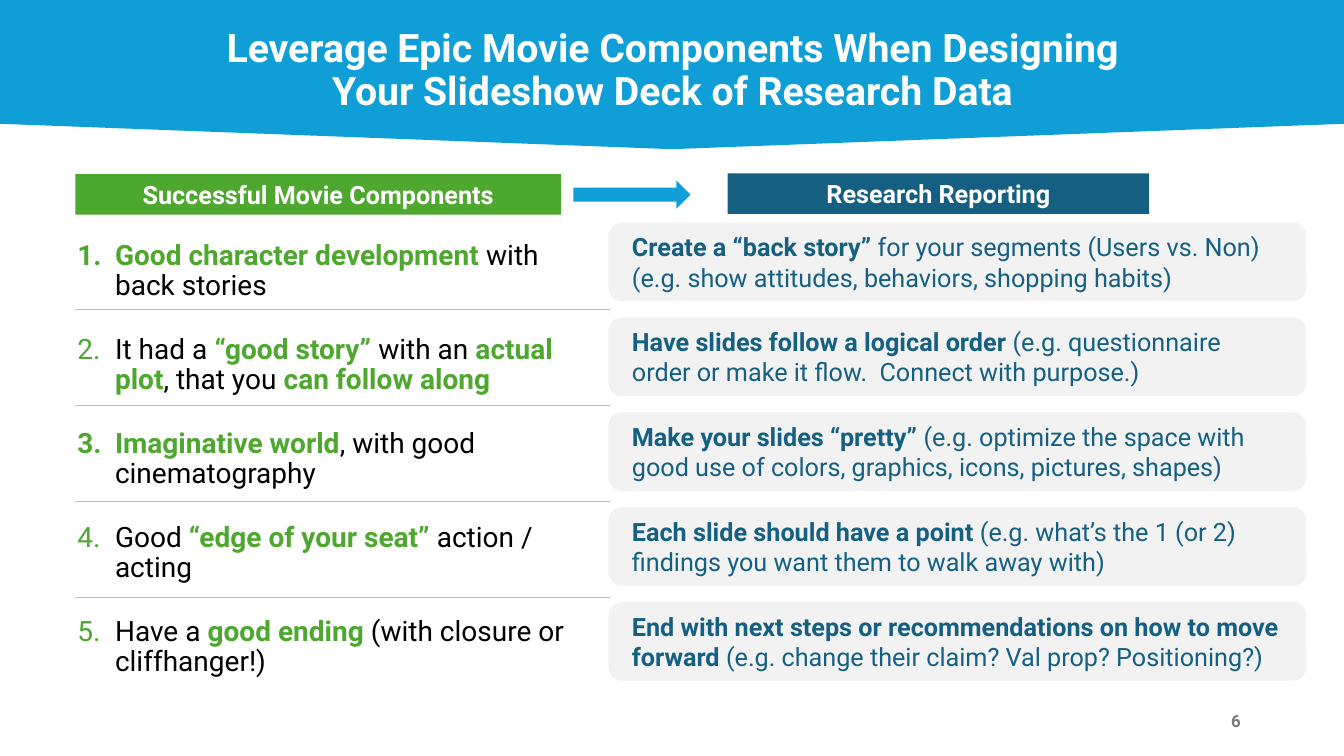
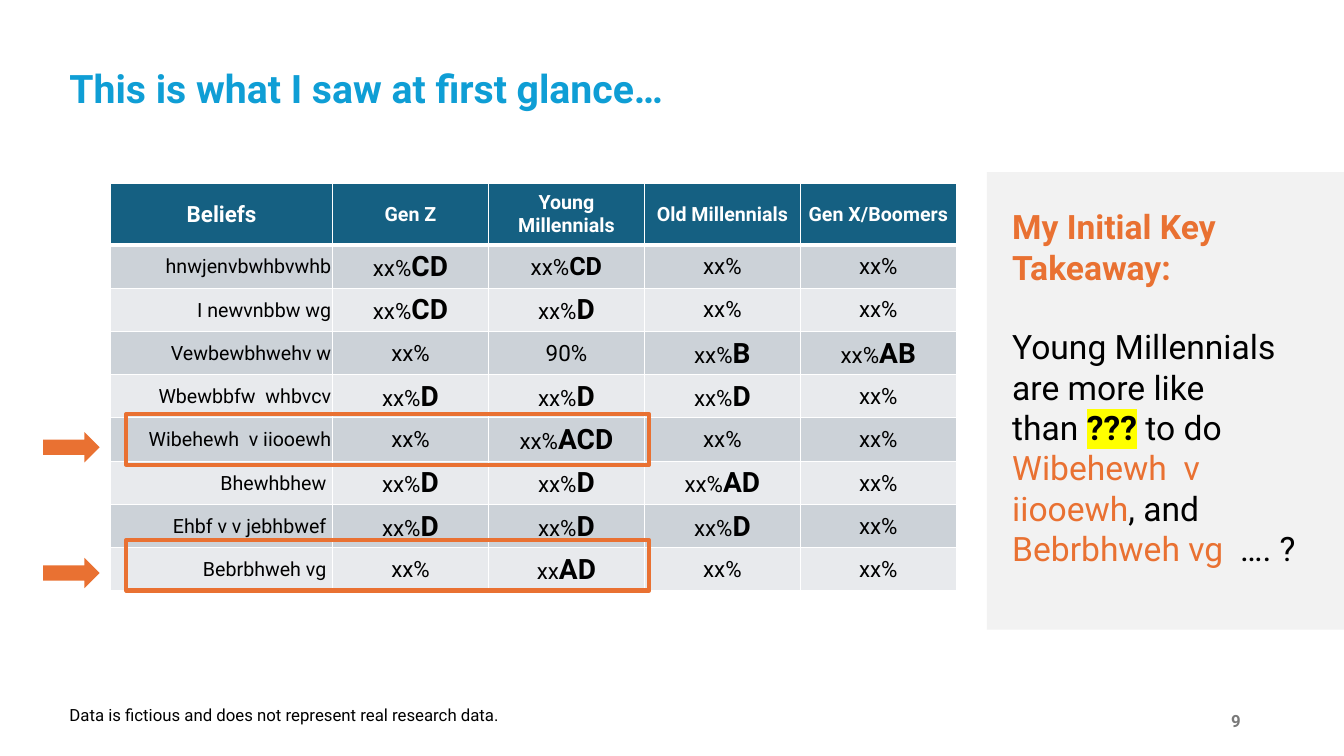
from dataclasses import dataclass
from typing import Any, NamedTuple, Sequence

from lxml.etree import SubElement
from pptx import Presentation
from pptx.dml.color import RGBColor
from pptx.enum.shapes import MSO_CONNECTOR, MSO_SHAPE
from pptx.enum.text import MSO_ANCHOR, PP_ALIGN
from pptx.oxml.ns import qn
from pptx.util import Cm, Pt

FONT = "Roboto"
NBSP = chr(160)
COLORS = {
    "sky": "0F9ED5", "navy": "156082", "green": "4EA72E", "orange": "E97132",
    "white": "FFFFFF", "black": "000000", "panel": "F2F2F2", "rule": "BFBFBF",
    "number": "797979", "dark_row": "CCD2D8", "light_row": "E8EAED",
    "marker": "FFFF00",
}
SLIDE_WIDTH, SLIDE_HEIGHT = 33.87, 19.05
INSETS = (0.25, 0.13, 0.25, 0.13)
CELL_INSETS = (0.03, 0.03, 0.03, 0)


class Box(NamedTuple):
    """Left, top, width and height in centimetres."""
    left: float
    top: float
    width: float
    height: float


class Run(NamedTuple):
    text: str
    color: str = "black"
    bold: bool = False
    size: float | None = None
    highlight: str | None = None


@dataclass(frozen=True)
class Para:
    runs: Sequence[Run]
    align: PP_ALIGN = PP_ALIGN.LEFT
    line_spacing: float = 1.0
    space_after: float = 0
    numbered: bool = False


@dataclass(frozen=True)
class Advice:
    lead: str
    detail: str
    right_inset: float = 0.59


class Score(NamedTuple):
    letters: str = ""
    value: str = "xx%"
    letter_size: int = 20


class Belief(NamedTuple):
    label: str
    scores: Sequence[Score]


def green(text: str) -> Run:
    return Run(text, "green", True)


COMPONENTS = [
    [green("Good character development "), Run("with back stories")],
    [Run("It had a "), green("“good story” "), Run("with an "), green("actual plot"),
     Run(", that you"), green(" can follow along")],
    [green("Imaginative world"), Run(", with good cinematography")],
    [Run("Good "), green("“edge of your seat” "), Run("action / acting")],
    [Run("Have a "), green("good ending "), Run("(with closure or cliffhanger!)")],
]
ADVICE = [
    Advice("Create a “back story” ",
           "for your segments (Users vs. Non) (e.g. show attitudes, behaviors, shopping habits)"),
    Advice("Have slides follow a logical order ",
           "(e.g. questionnaire order or make it flow.  Connect with purpose.)"),
    Advice("Make your slides “pretty” ",
           "(e.g. optimize the space with good use of colors, graphics, icons, pictures, shapes)"),
    Advice("Each slide should have a point ",
           "(e.g. what’s the 1 (or 2) findings you want them to walk away with)"),
    Advice("End with next steps or recommendations on how to move forward ",
           "(e.g. change their claim? Val prop? Positioning?)", right_inset=0.16),
]
GENERATIONS = ["Gen Z", "Young Millennials", "Old Millennials", "Gen X/Boomers"]
BELIEFS = [
    Belief("hnwjenvbwhbvwhb", [Score("CD"), Score("CD", letter_size=18), Score(), Score()]),
    Belief("I newvnbbw wg", [Score("CD"), Score("D"), Score(), Score()]),
    Belief("Vewbewbhwehv w", [Score(), Score(value="90%"), Score("B"), Score("AB")]),
    Belief("Wbewbbfw  whbvcv", [Score("D"), Score("D"), Score("D"), Score()]),
    Belief("Wibehewh  v iiooewh", [Score(), Score("ACD"), Score(), Score()]),
    Belief("Bhewhbhew ", [Score("D"), Score("D"), Score("AD"), Score()]),
    Belief("Ehbf v v jebhbwef ", [Score("D"), Score("D"), Score("D"), Score()]),
    Belief("Bebrbhweh vg ", [Score(), Score("AD", value="xx"), Score(), Score()]),
]


def rgb(color: str) -> RGBColor:
    return RGBColor.from_string(COLORS[color])


def apply_format(target: Any, values: dict[str, Any]) -> None:
    for name, value in values.items():
        setattr(target, name, value)


def margins(insets: Sequence[float]) -> dict[str, Any]:
    sides = ("left", "top", "right", "bottom")
    return {f"margin_{side}": Cm(inset) for side, inset in zip(sides, insets)}


def add_color(parent: Any, tag: str, color: str) -> Any:
    """Append an element of the given tag that holds one RGB colour."""
    element = SubElement(parent, qn(tag))
    SubElement(element, qn("a:srgbClr"), val=COLORS[color])
    return element


def number_paragraph(paragraph: Any, indent: float = 0.95) -> None:
    properties = paragraph._p.get_or_add_pPr()
    properties.set("marL", str(Cm(indent)))
    properties.set("indent", str(-Cm(indent)))
    add_color(properties, "a:buClr", "green")
    SubElement(properties, qn("a:buFont"), typeface="+mj-lt")
    SubElement(properties, qn("a:buAutoNum"), type="arabicPeriod")


def write(text_frame: Any, paras: Sequence[Para], size: float) -> None:
    for index, para in enumerate(paras):
        paragraph = text_frame.add_paragraph() if index else text_frame.paragraphs[0]
        apply_format(paragraph, {
            "alignment": para.align,
            "line_spacing": para.line_spacing,
            "space_after": Pt(para.space_after),
        })
        if para.numbered:
            number_paragraph(paragraph)
        for part in para.runs:
            run = paragraph.add_run()
            run.text = part.text
            apply_format(run.font, {
                "name": FONT, "size": Pt(part.size or size), "bold": part.bold})
            run.font.color.rgb = rgb(part.color)
            if part.highlight:
                properties = run._r.get_or_add_rPr()
                marker = add_color(properties, "a:highlight", part.highlight)
                properties.find(qn("a:solidFill")).addnext(marker)


def fill_text(shape: Any, paras: Sequence[Para], size: float,
              anchor: MSO_ANCHOR, insets: Sequence[float]) -> None:
    apply_format(shape.text_frame, {
        "word_wrap": True, "vertical_anchor": anchor, **margins(insets)})
    write(shape.text_frame, paras, size)


def add_text(slide: Any, box: Box, paras: Sequence[Para], size: float,
             anchor: MSO_ANCHOR = MSO_ANCHOR.TOP) -> None:
    fill_text(slide.shapes.add_textbox(*map(Cm, box)), paras, size, anchor, INSETS)


def add_block(slide: Any, kind: MSO_SHAPE, box: Box, fill: str | None = None,
              outline: str | None = None, paras: Sequence[Para] = (), size: float = 18,
              anchor: MSO_ANCHOR = MSO_ANCHOR.MIDDLE,
              insets: Sequence[float] = INSETS) -> Any:
    block = slide.shapes.add_shape(kind, *map(Cm, box))
    block.shadow.inherit = False
    if fill:
        block.fill.solid()
        block.fill.fore_color.rgb = rgb(fill)
    else:
        block.fill.background()
    if outline:
        block.line.color.rgb = rgb(outline)
        block.line.width = Pt(3)
    else:
        block.line.fill.background()
    if paras:
        fill_text(block, paras, size, anchor, insets)
    return block


def add_divider(slide: Any, left: float, right: float, top: float) -> None:
    divider = slide.shapes.add_connector(
        MSO_CONNECTOR.STRAIGHT, Cm(left), Cm(top), Cm(right), Cm(top))
    divider.line.color.rgb = rgb("rule")
    divider.line.width = Pt(0.75)
    SubElement(divider._element.spPr, qn("a:effectLst"))


def add_title(slide: Any, box: Box, text: str, color: str, align: PP_ALIGN) -> None:
    add_text(slide, box, [Para([Run(text, color, True)], align, 0.9)], 28, MSO_ANCHOR.MIDDLE)


def add_page_number(slide: Any, number: int) -> None:
    add_text(slide, Box(30.07, 17.65, 1.45, 1.02),
             [Para([Run(str(number), "number", True)], PP_ALIGN.RIGHT)], 12, MSO_ANCHOR.MIDDLE)


def format_cell(cell: Any, fill: str, para: Para, size: float,
                top_line: float, bottom_line: float) -> None:
    properties = cell._tc.get_or_add_tcPr()
    widths = {"a:lnL": 1, "a:lnR": 1, "a:lnT": top_line, "a:lnB": bottom_line}
    for tag, width in widths.items():
        border = SubElement(properties, qn(tag), w=str(Pt(width)))
        add_color(border, "a:solidFill", "white")
    cell.fill.solid()
    cell.fill.fore_color.rgb = rgb(fill)
    apply_format(cell, {"vertical_anchor": MSO_ANCHOR.MIDDLE, **margins(CELL_INSETS)})
    write(cell.text_frame, [para], size)


def add_beliefs_table(slide: Any) -> None:
    label_width, score_width, header_height, row_height = 5.59, 3.93, 1.55, 1.09
    box = Box(2.79, 4.62, label_width + score_width * len(GENERATIONS),
              header_height + row_height * len(BELIEFS))
    table = slide.shapes.add_table(
        len(BELIEFS) + 1, len(GENERATIONS) + 1, *map(Cm, box)).table
    table.horz_banding = False
    for index, column in enumerate(table.columns):
        column.width = Cm(score_width if index else label_width)
    for index, row in enumerate(table.rows):
        row.height = Cm(row_height if index else header_height)

    for column, heading in enumerate(["Beliefs", *GENERATIONS]):
        format_cell(table.cell(0, column), "navy",
                    Para([Run(heading, "white", True)], PP_ALIGN.CENTER),
                    14 if column else 16, 1, 3)
    for row, belief in enumerate(BELIEFS, start=1):
        fill = "dark_row" if row % 2 else "light_row"
        top_line = 3 if row == 1 else 1
        format_cell(table.cell(row, 0), fill,
                    Para([Run(belief.label)], PP_ALIGN.RIGHT), 14, top_line, 1)
        for column, score in enumerate(belief.scores, start=1):
            runs = [Run(score.value)]
            if score.letters:
                runs.append(Run(score.letters, bold=True, size=score.letter_size))
            format_cell(table.cell(row, column), fill,
                        Para(runs, PP_ALIGN.CENTER), 16, top_line, 1)


def build_movie_slide(slide: Any) -> None:
    depth = 3.76
    offset = (SLIDE_WIDTH - depth) / 2
    band = add_block(slide, MSO_SHAPE.PENTAGON, Box(offset, -offset, depth, SLIDE_WIDTH), "sky")
    band.rotation = 90
    band.adjustments[0] = 0.17
    add_title(slide, Box(4.5, 0.64, 24.89, 2.31),
              "Leverage Epic Movie Components When Designing Your Slideshow Deck of Research Data",
              "white", PP_ALIGN.CENTER)
    add_page_number(slide, 6)

    headings = [
        ("Successful Movie Components", "green", Box(1.9, 4.39, 12.24, 1.02)),
        ("Research Reporting", "navy", Box(18.34, 4.37, 10.62, 1.02)),
    ]
    for heading, fill, box in headings:
        add_block(slide, MSO_SHAPE.RECTANGLE, box, fill,
                  paras=[Para([Run(heading, "white", True)], PP_ALIGN.CENTER)])
    add_block(slide, MSO_SHAPE.RIGHT_ARROW, Box(14.45, 4.55, 2.95, 0.71), "sky")

    add_text(slide, Box(1.7, 5.94, 12.93, 11.38),
             [Para(runs, line_spacing=0.9, space_after=24, numbered=True)
              for runs in COMPONENTS], 20)
    for index in range(len(COMPONENTS) - 1):
        add_divider(slide, 1.9, 15.37, 7.8 + 2.42 * index)
    for index, advice in enumerate(ADVICE):
        add_block(slide, MSO_SHAPE.ROUNDED_RECTANGLE,
                  Box(15.34, 5.61 + 2.39 * index, 17.58, 1.98), "panel",
                  paras=[Para([Run(advice.lead, "navy", True), Run(advice.detail, "navy")])],
                  insets=(0.49, 0, advice.right_inset, 0))


def build_glance_slide(slide: Any) -> None:
    add_title(slide, Box(1.5, 1.27, 31.27, 2.03), "This is what I saw at first glance…",
              "sky", PP_ALIGN.LEFT)
    add_page_number(slide, 9)
    add_beliefs_table(slide)
    add_text(slide, Box(1.5, 17.63, 11.94, 0.76),
             [Para([Run("Data is fictious and does not represent real research data.")])], 12)
    for top in (10.44, 13.61):
        add_block(slide, MSO_SHAPE.RECTANGLE, Box(3.18, top, 13.18, 1.27), outline="orange")
        add_block(slide, MSO_SHAPE.RIGHT_ARROW, Box(1.09, top + 0.45, 1.42, 0.76), "orange")

    takeaway = [
        Para([Run("My Initial Key Takeaway:", "orange", True)], space_after=28),
        Para([Run(f"Young Millennials are more like than{NBSP}"),
              Run("???", bold=True, highlight="marker"), Run(" to do "),
              Run("Wibehewh  v iiooewh", "orange"), Run(", and "),
              Run("Bebrbhweh vg  ", "orange"), Run("…. ?")]),
    ]
    add_block(slide, MSO_SHAPE.RECTANGLE, Box(24.87, 4.34, 9, 11.53), "panel",
              paras=takeaway, size=24, anchor=MSO_ANCHOR.TOP, insets=(0.64, 0.86, 1.1, 0.13))


def main() -> None:
    deck = Presentation()
    apply_format(deck, {"slide_width": Cm(SLIDE_WIDTH), "slide_height": Cm(SLIDE_HEIGHT)})
    for build in (build_movie_slide, build_glance_slide):
        build(deck.slides.add_slide(deck.slide_layouts[6]))
    deck.save("out.pptx")


if __name__ == "__main__":
    main()
